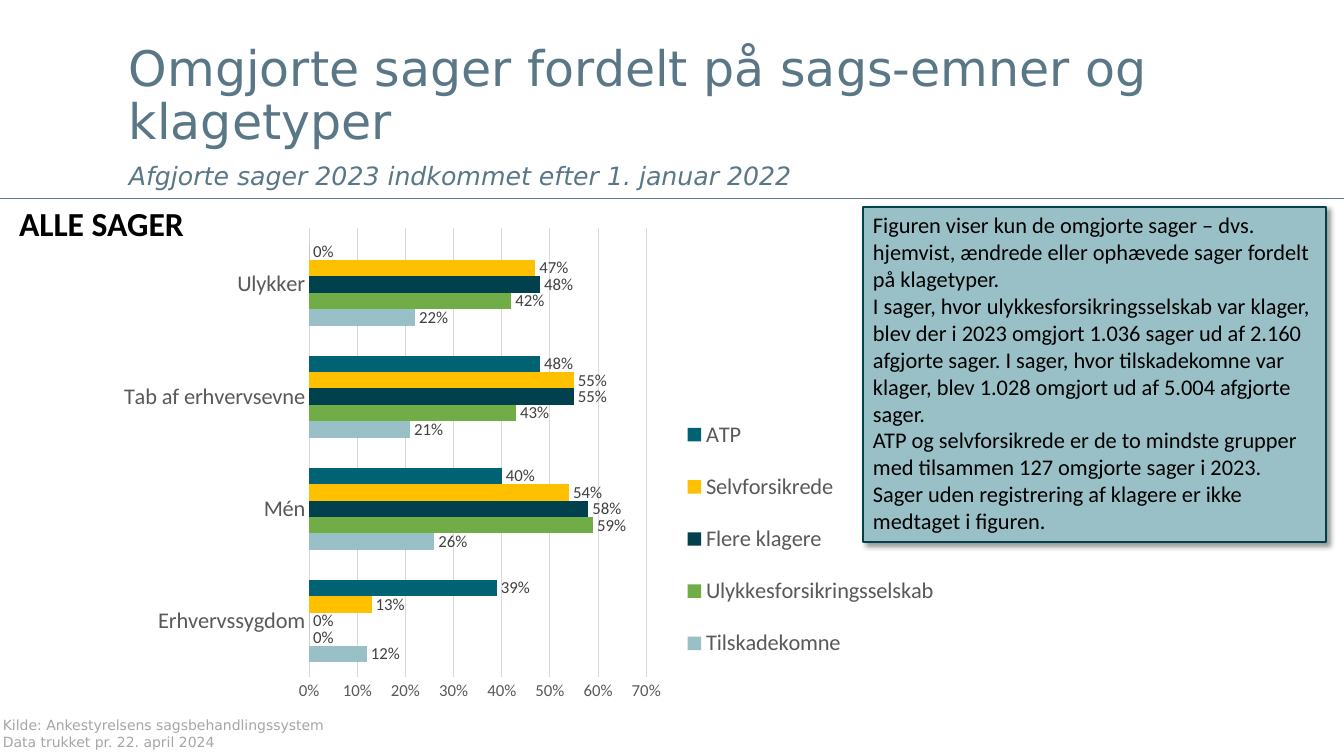
import pptx
import pptx.chart.data
import pptx.dml.color
import pptx.enum.chart
import pptx.enum.shapes
import pptx.enum.text
import pptx.oxml
import pptx.oxml.ns
import pptx.util

Inches = pptx.util.Inches
Pt = pptx.util.Pt
RGBColor = pptx.dml.color.RGBColor

BLACK = RGBColor(0x00, 0x00, 0x00)
SLATE = RGBColor(0x59, 0x77, 0x86)
RULE = RGBColor(0x5F, 0x7B, 0x8A)
SOURCE_GREY = RGBColor(0xA6, 0xA6, 0xA6)
AXIS_GREY = RGBColor(0x59, 0x59, 0x59)
LABEL_GREY = RGBColor(0x40, 0x40, 0x40)
GRID_GREY = RGBColor(0xD9, 0xD9, 0xD9)
PALE_TEAL = RGBColor(0x99, 0xC0, 0xC6)
GREEN = RGBColor(0x70, 0xAD, 0x47)
DARK_TEAL = RGBColor(0x00, 0x41, 0x4D)
YELLOW = RGBColor(0xFF, 0xC0, 0x00)
TEAL = RGBColor(0x00, 0x62, 0x72)

CATEGORIES = ["Erhvervssygdom", "Mén", "Tab af erhvervsevne", "Ulykker"]
COMPLAINANTS = [
    ("Tilskadekomne", [0.12, 0.26, 0.21, 0.22], PALE_TEAL),
    ("Ulykkesforsikringsselskab", [0, 0.59, 0.43, 0.42], GREEN),
    ("Flere klagere", [0, 0.58, 0.55, 0.48], DARK_TEAL),
    ("Selvforsikrede", [0.13, 0.54, 0.55, 0.47], YELLOW),
    ("ATP", [0.39, 0.40, 0.48, 0], TEAL),
]
EXPLANATION = [
    "Figuren viser kun de omgjorte sager – dvs. hjemvist, ændrede eller ophævede "
    "sager fordelt på klagetyper.",
    "I sager, hvor ulykkesforsikringsselskab var klager, blev der i 2023 omgjort "
    "1.036 sager ud af 2.160 afgjorte sager. I sager, hvor tilskadekomne var klager, "
    "blev 1.028 omgjort ud af 5.004 afgjorte sager.",
    "ATP og selvforsikrede er de to mindste grupper med tilsammen 127 omgjorte "
    "sager i 2023.",
    "Sager uden registrering af klagere er ikke medtaget i figuren.",
]


def style_font(font, size, color, name="Calibri", bold=False, italic=False):
    font.size = Pt(size)
    font.name = name
    font.bold = bold
    font.italic = italic
    font.color.rgb = color


def write(frame, text, first=False, line_spacing=None, space_before=0, **style):
    """Put text in the frame's first paragraph or in a new one."""
    paragraph = frame.paragraphs[0] if first else frame.add_paragraph()
    paragraph.alignment = pptx.enum.text.PP_ALIGN.LEFT
    paragraph.space_before = Pt(0 if first else space_before)
    if line_spacing:
        paragraph.line_spacing = line_spacing
    run = paragraph.add_run()
    run.text = text
    style_font(run.font, **style)


def make_element(prefix, tag, attributes="", children=""):
    name = f"{prefix}:{tag}"
    declaration = pptx.oxml.ns.nsdecls(prefix)
    return pptx.oxml.parse_xml(
        f"<{name} {declaration} {attributes}>{children}</{name}>")


def manual_layout(left, top, width, height, inner=False):
    """Layout in fractions of the chart area."""
    target = '<c:layoutTarget val="inner"/>' if inner else ""
    sizes = zip("xywh", (left, top, width, height))
    values = "".join(f'<c:{key} val="{value}"/>' for key, value in sizes)
    return make_element(
        "c", "layout",
        children=f'<c:manualLayout>{target}<c:xMode val="edge"/>'
        f'<c:yMode val="edge"/>{values}</c:manualLayout>')


class SlideBuilder:
    def __init__(self, presentation):
        self.slide = presentation.slides.add_slide(presentation.slide_layouts[6])
        self.shapes = self.slide.shapes

    def rule(self, top, width):
        line = self.shapes.add_connector(
            pptx.enum.shapes.MSO_CONNECTOR.STRAIGHT,
            Inches(0), Inches(top), Inches(width), Inches(top))
        line.line.color.rgb = RULE
        line.line.width = Pt(1.25)
        line._element.spPr.append(make_element("a", "effectLst"))

    def text_box(self, left, top, width, height, wrap=True, grow=True):
        box = self.shapes.add_textbox(*map(Inches, (left, top, width, height)))
        frame = box.text_frame
        frame.word_wrap = wrap
        sizing = pptx.enum.text.MSO_AUTO_SIZE
        frame.auto_size = sizing.SHAPE_TO_FIT_TEXT if grow else sizing.NONE
        return frame

    def callout(self, left, top, width, height):
        box = self.shapes.add_shape(
            pptx.enum.shapes.MSO_SHAPE.RECTANGLE,
            *map(Inches, (left, top, width, height)))
        box.fill.solid()
        box.fill.fore_color.rgb = PALE_TEAL
        box.line.color.rgb = DARK_TEAL
        box.line.width = Pt(1.5)
        box.shadow.inherit = False
        effects = box._element.spPr.find(pptx.oxml.ns.qn("a:effectLst"))
        effects.append(make_element(
            "a", "outerShdw",
            f'blurRad="{Pt(4)}" dist="{Pt(3)}" dir="2700000" '
            'algn="tl" rotWithShape="0"',
            '<a:srgbClr val="000000"><a:alpha val="40000"/></a:srgbClr>'))
        frame = box.text_frame
        frame.word_wrap = True
        frame.auto_size = pptx.enum.text.MSO_AUTO_SIZE.SHAPE_TO_FIT_TEXT
        frame.vertical_anchor = pptx.enum.text.MSO_ANCHOR.TOP
        return frame

    def bar_chart(self, left, top, width, height):
        kinds = pptx.enum.chart
        data = pptx.chart.data.CategoryChartData(number_format="0%")
        data.categories = CATEGORIES
        for name, values, _ in COMPLAINANTS:
            data.add_series(name, values)
        chart = self.shapes.add_chart(
            kinds.XL_CHART_TYPE.BAR_CLUSTERED,
            *map(Inches, (left, top, width, height)), data).chart
        style_font(chart.font, 12, BLACK)
        chart.has_title = False

        plot = chart.plots[0]
        plot.gap_width = 182
        plot.overlap = 0
        plot.vary_by_categories = False
        for series, (_, _, color) in zip(plot.series, COMPLAINANTS):
            series.format.fill.solid()
            series.format.fill.fore_color.rgb = color
            series.invert_if_negative = False
            labels = series.data_labels
            labels.show_value = True
            labels.position = kinds.XL_LABEL_POSITION.OUTSIDE_END
            labels.number_format = "0%"
            labels.number_format_is_linked = False
            style_font(labels.font, 12, LABEL_GREY)

        for axis, size in ((chart.category_axis, 16), (chart.value_axis, 12)):
            axis.major_tick_mark = kinds.XL_TICK_MARK.NONE
            axis.minor_tick_mark = kinds.XL_TICK_MARK.NONE
            style_font(axis.tick_labels.font, size, AXIS_GREY)
        values = chart.value_axis
        values.minimum_scale, values.maximum_scale, values.major_unit = 0, 0.7, 0.1
        values.tick_labels.number_format = "0%"
        values.tick_labels.number_format_is_linked = False
        values.format.line.fill.background()
        for line in (chart.category_axis.format.line,
                     values.major_gridlines.format.line):
            line.color.rgb = GRID_GREY
            line.width = Pt(0.75)

        chart.has_legend = True
        legend = chart.legend
        legend.position = kinds.XL_LEGEND_POSITION.RIGHT
        legend.include_in_layout = False
        style_font(legend.font, 16, AXIS_GREY)
        for layout in legend._element.findall(pptx.oxml.ns.qn("c:layout")):
            legend._element.remove(layout)
        legend_position = legend._element.find(pptx.oxml.ns.qn("c:legendPos"))
        legend_position.addnext(manual_layout(0.68, 0.36, 0.31, 0.58))
        plot_area = chart._chartSpace.chart.plotArea
        for layout in plot_area.findall(pptx.oxml.ns.qn("c:layout")):
            plot_area.remove(layout)
        plot_area.insert(0, manual_layout(0.24, 0.02, 0.4, 0.91, inner=True))


def main():
    presentation = pptx.Presentation()
    presentation.slide_width = Inches(13.33)
    presentation.slide_height = Inches(7.5)
    builder = SlideBuilder(presentation)
    builder.rule(1.97, 13.33)

    heading = builder.text_box(1.18, 0.39, 10.51, 0.68, grow=False)
    heading_style = dict(color=SLATE, name="DejaVu Sans", line_spacing=0.9)
    write(heading, "Omgjorte sager fordelt på sags-emner og klagetyper",
          first=True, size=35, **heading_style)
    write(heading, "Afgjorte sager 2023 indkommet efter 1. januar 2022",
          size=18, italic=True, space_before=10, **heading_style)

    source = builder.text_box(-0.07, 7.06, 3.45, 0.44, wrap=False)
    source_style = dict(size=10, color=SOURCE_GREY, name="DejaVu Sans")
    write(source, "Kilde: Ankestyrelsens sagsbehandlingssystem", first=True, **source_style)
    write(source, "Data trukket pr. 22. april 2024", **source_style)

    scope = builder.text_box(0.09, 1.96, 2.15, 0.5)
    write(scope, "ALLE SAGER", first=True, size=24, color=BLACK, bold=True)

    builder.bar_chart(1.06, 2.17, 8.36, 4.89)

    callout = builder.callout(8.56, 2.05, 4.59, 3.33)
    for index, text in enumerate(EXPLANATION):
        write(callout, text, first=index == 0, size=16, color=BLACK)

    presentation.save("out.pptx")


if __name__ == "__main__":
    main()
